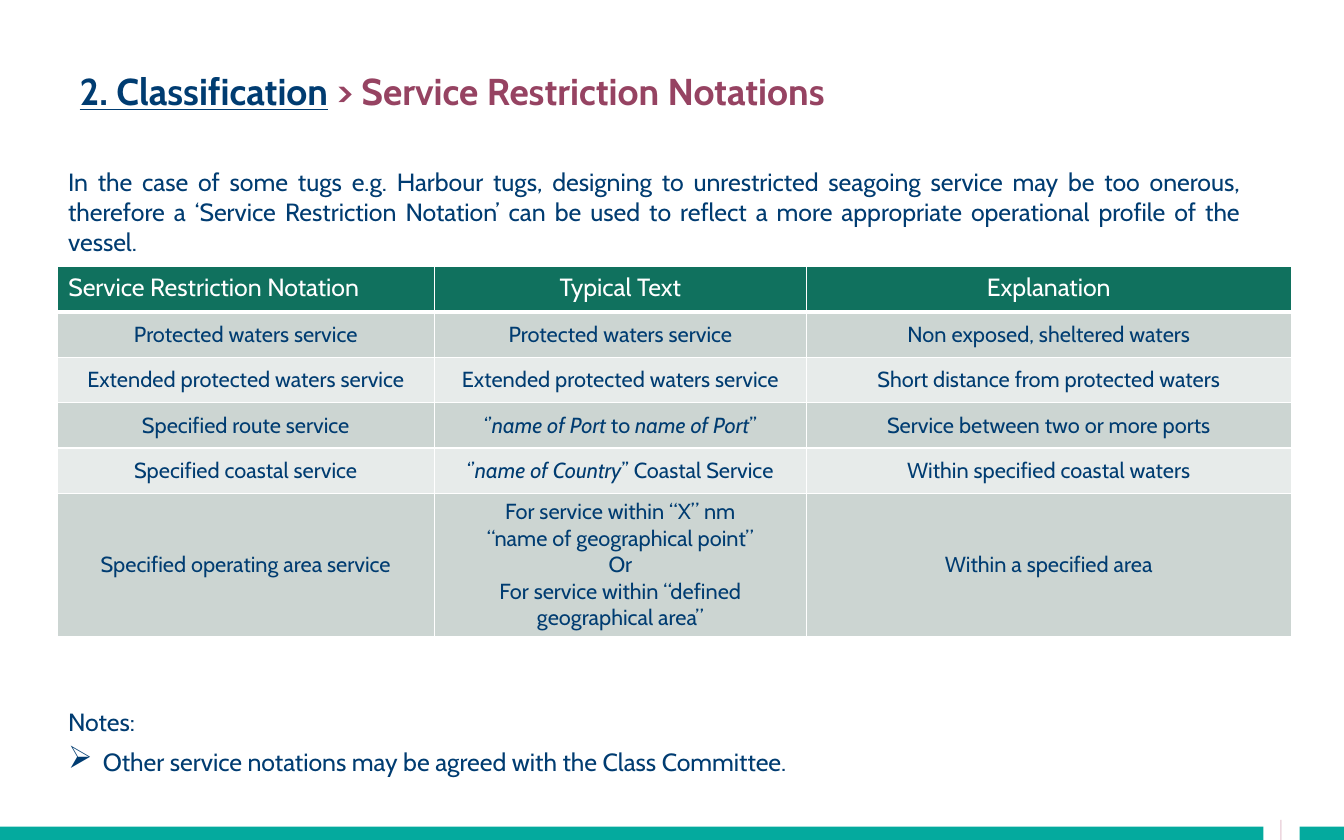
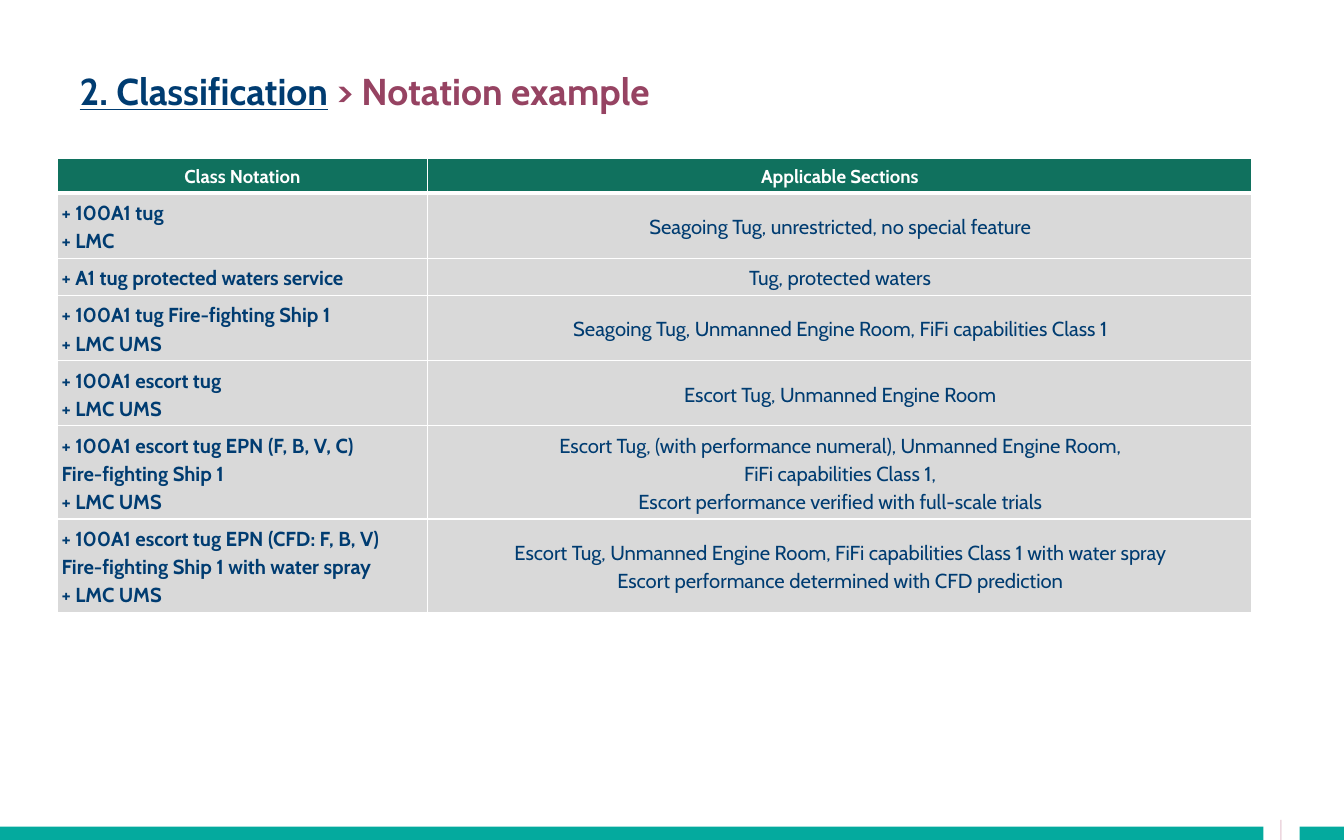
from lxml import etree
from pptx import Presentation
from pptx import util as u
from pptx.dml.color import RGBColor
from pptx.enum import shapes, text
from pptx.oxml import ns

FONT = "Cabin"
NAVY, PLUM, TEAL, ROSE = "003C71", "964362", "04AA9E", "BB6786"
GREEN, WHITE, GREY = "10715E", "FFFFFF", "D9D9D9"
BANDS = ("CCD5D2", "E7EBEA")
COLS, ROWS = 120, 75  # slide grid: square units of a tenth of an inch
LEFT, MID, JUST = text.PP_ALIGN.LEFT, text.PP_ALIGN.CENTER, text.PP_ALIGN.JUSTIFY
TOP, CORE = text.MSO_ANCHOR.TOP, text.MSO_ANCHOR.MIDDLE


def grid(*units):
    return [u.Inches(n / 10) for n in units]


def rgb(code):
    return RGBColor.from_string(code)


def node(parent, tag, **attrs):
    item = etree.SubElement(parent, ns.qn("a:" + tag))
    for key, val in attrs.items():
        item.set(key, str(val))
    return item


def style(run, size, color, bold=False, italic=False, under=False):
    font = run.font
    font.name, font.size, font.color.rgb = FONT, u.Pt(size), rgb(color)
    font.bold, font.italic, font.underline = bold, italic, under


def write(frame, paras, align=LEFT, lead=None, gap=0, bullet=None, **fmt):
    """Each paragraph is a string or a list of strings and (string, format) pairs."""
    frame.word_wrap = True
    for n, para in enumerate(paras):
        line = frame.paragraphs[0] if n == 0 else frame.add_paragraph()
        line.alignment = align
        if lead:
            line.line_spacing = lead
        line.space_before, line.space_after = u.Pt(gap if n else 0), u.Pt(gap)
        if n == bullet:
            mark(line)
        for part in [para] if isinstance(para, str) else para:
            words, extra = (part, {}) if isinstance(part, str) else part
            run = line.add_run()
            run.text = words
            style(run, **{**fmt, **extra})


def mark(line):
    """Arrow bullet with a hanging indent."""
    props = line._p.get_or_add_pPr()
    props.set("marL", str(u.Inches(0.31)))
    props.set("indent", str(-u.Inches(0.31)))
    node(node(props, "buClr"), "srgbClr", val=NAVY)
    node(props, "buSzPct", val=125000)
    node(props, "buChar", char="➢")


def inset(item, size):
    item.margin_left = item.margin_right = u.Inches(size)
    item.margin_top = item.margin_bottom = u.Inches(size)


# Footer: two bars with a thin rule in the gap
def footer(slide, box):
    x, y, w, h = box
    bar = h * 2 / 3
    for start, end in ((0, 0.94), (0.967, 1)):
        rect = slide.shapes.add_shape(
            shapes.MSO_SHAPE.RECTANGLE,
            *grid(x + w * start, y + h - bar, w * (end - start), bar))
        rect.shadow.inherit = False
        rect.fill.solid()
        rect.fill.fore_color.rgb = rgb(TEAL)
        rect.line.fill.background()
    mid = x + w * 0.953
    rule = slide.shapes.add_connector(
        shapes.MSO_CONNECTOR.STRAIGHT, *grid(mid, y + h, mid, y))
    rule.line.width = u.Pt(1)
    rule.line.color.rgb = rgb(ROSE)
    tint = rule._element.spPr.find(".//" + ns.qn("a:srgbClr"))
    node(tint, "alpha", val=25000)
    node(rule._element.spPr, "effectLst")


# Title: underlined section, then the topic
def title(slide, topic, box):
    head = slide.shapes.title
    head.left, head.top, head.width, head.height = grid(*box)
    frame = head.text_frame
    frame.auto_size = text.MSO_AUTO_SIZE.NONE
    frame.vertical_anchor = TOP
    inset(frame, 0.04)
    write(frame, [[("2. Classification", {"color": NAVY, "under": True}),
                   " > " + topic]], size=24, color=PLUM, bold=True)


def note(slide, paras, box, **fmt):
    frame = slide.shapes.add_textbox(*grid(*box)).text_frame
    write(frame, paras, align=JUST, gap=3.2, size=16, color=NAVY, **fmt)


def edges(cell, base):
    props = cell._tc.get_or_add_tcPr()
    for side, width in (("L", 1), ("R", 1), ("T", 1), ("B", base)):
        line = node(props, "ln" + side, w=u.Pt(width))
        node(node(line, "solidFill"), "srgbClr", val=WHITE)


# Table: green head row, then body rows filled by turns
def table(slide, rows, spot, cols, highs, fills, looks, pad=None):
    """looks(row, col) gives the text format of a cell."""
    sheet = slide.shapes.add_table(
        len(rows), len(cols), *grid(*spot, sum(cols), sum(highs))).table
    for col, wide in zip(sheet.columns, grid(*cols)):
        col.width = wide
    for r, (row, high) in enumerate(zip(rows, grid(*highs))):
        sheet.rows[r].height = high
        for c, paras in enumerate(row):
            cell = sheet.cell(r, c)
            edges(cell, 1 if r else 3)
            cell.fill.solid()
            cell.fill.fore_color.rgb = rgb(fills[(r - 1) % len(fills)] if r else GREEN)
            cell.vertical_anchor = CORE if r else TOP
            if pad:
                inset(cell, pad)
            write(cell.text_frame, [paras] if isinstance(paras, str) else paras,
                  color=NAVY if r else WHITE, **looks(r, c))


def page(deck, topic):
    slide = deck.slides.add_slide(deck.slide_layouts[5])
    footer(slide, (0, ROWS - 1.8, COLS, 1.8))
    title(slide, topic, (6.7, 5.7, 101.9, 5.8))
    return slide


def limits(deck):
    slide = page(deck, "Service Restriction Notations")
    note(slide, ["In the case of some tugs e.g. Harbour tugs, designing to unrestricted "
                 "seagoing service may be too onerous, therefore a ‘Service Restriction "
                 "Notation’ can be used to reflect a more appropriate operational profile "
                 "of the vessel."], (5.1, 14.4, 106.7, 9.2))
    slant = {"italic": True}
    port = ("name of Port", slant)
    rows = [
        ("Service Restriction Notation", "Typical Text", "Explanation"),
        ("Protected waters service", "Protected waters service",
         "Non exposed, sheltered waters"),
        ("Extended protected waters service", "Extended protected waters service",
         "Short distance from protected waters"),
        ("Specified route service", [["‘’", port, " to ", port, "’’"]],
         "Service between two or more ports"),
        ("Specified coastal service",
         [["‘’", ("name of Country", slant), "’’ Coastal Service"]],
         "Within specified coastal waters"),
        ("Specified operating area service",
         ["For service within “X” nm", "“name of geographical point”", "Or",
          "For service within “defined", "geographical area”"],
         "Within a specified area"),
    ]

    def looks(r, c):
        return {"size": 14 if r else 16, "align": MID if r or c else LEFT}

    table(slide, rows, (5.1, 23.8), (33.7, 33.2, 43.3), [4.05] * 5 + [12.8],
          BANDS, looks)
    note(slide, ["Notes:", "Other service notations may be agreed with the Class Committee."],
         (5.1, 62.6, 106.7, 7.5), bullet=1)


def sample(deck):
    slide = page(deck, "Notation example")
    ums, ship = "+ LMC UMS", "Fire-fighting Ship 1"
    rows = [
        ("Class Notation", "Applicable Sections"),
        (["+ 100A1 tug", "+ LMC"], "Seagoing Tug, unrestricted, no special feature"),
        (["+ A1 tug protected waters service"], "Tug, protected waters"),
        (["+ 100A1 tug " + ship, ums],
         "Seagoing Tug, Unmanned Engine Room, FiFi capabilities Class 1"),
        (["+ 100A1 escort tug", ums], "Escort Tug, Unmanned Engine Room"),
        (["+ 100A1 escort tug EPN (F, B, V, C)", ship, ums],
         ["Escort Tug, (with performance numeral), Unmanned Engine Room,",
          "FiFi capabilities Class 1,",
          "Escort performance verified with full-scale trials"]),
        (["+ 100A1 escort tug EPN (CFD: F, B, V)", ship + " with water spray", ums],
         ["Escort Tug, Unmanned Engine Room, FiFi capabilities Class 1 with water spray",
          "Escort performance determined with CFD prediction"]),
    ]

    def looks(r, c):
        return {"size": 13 if r else 12, "lead": 1.15, "bold": not (r and c),
                "align": LEFT if r and not c else MID}

    highs = [3.1] + [0.8 + 2.5 * len(row[0]) for row in rows[1:]]
    table(slide, rows, (5.1, 14.1), (33.1, 73.6), highs, [GREY], looks, pad=0.04)


def main():
    deck = Presentation()
    deck.slide_width, deck.slide_height = grid(COLS, ROWS)
    limits(deck)
    sample(deck)
    deck.save("out.pptx")


if __name__ == "__main__":
    main()
